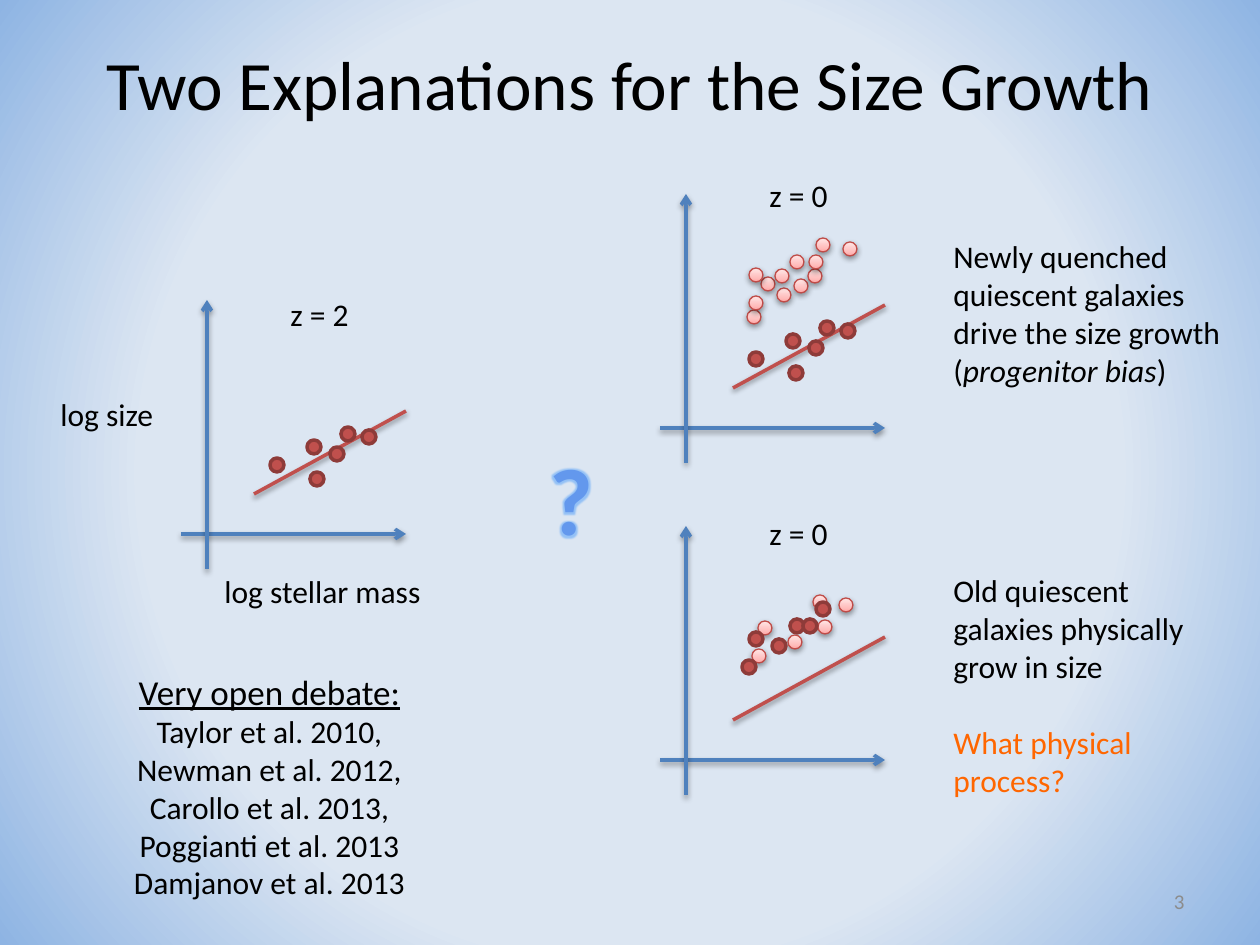
from lxml import etree
from pptx import Presentation
from pptx import util as u
from pptx.dml.color import RGBColor
from pptx.enum import shapes as s, text as t
from pptx.oxml import parse_xml
from pptx.oxml.ns import nsdecls, qn

PX = 914400 / 126
FONT = "Calibri"
BLACK, GREY, ORANGE = "000000", "8C8C8C", "FF6600"
BLUE, RED, DARK_RED, ROSE = "4F81BD", "C0504D", "8E3B39", "BF4C48"
DOT = 14

# Dot centres, relative to the point where the axes cross
COMPACT = [(70, -69), (110, -55), (107, -87), (141, -100), (162, -97), (130, -80)]
QUENCHED = [(68, -111), (98, -133), (82, -144), (115, -142), (164, -179), (129, -152),
            (70, -125), (96, -152), (70, -153), (111, -166), (137, -183), (130, -166)]
GROWN = [(63, -93), (93, -114), (70, -121), (111, -134), (137, -151), (124, -134)]
GROWN_NEW = [(73, -104), (109, -118), (160, -155), (139, -133), (79, -132), (134, -158)]


def px(*values):
    return [round(value * PX) for value in values]


def rgb(color):
    return RGBColor.from_string(color)


def gradient(stops, direction):
    """Return a gradFill element; direction is its a:lin or a:path markup."""
    marks = "".join(f'<a:gs pos="{position * 1000}"><a:srgbClr val="{color}"/></a:gs>'
                    for position, color in stops)
    return parse_xml(f'<a:gradFill {nsdecls("a")} rotWithShape="1">'
                     f"<a:gsLst>{marks}</a:gsLst>{direction}</a:gradFill>")


def set_background(slide):
    background = parse_xml(f'<p:bg {nsdecls("p", "a")}><p:bgPr><a:effectLst/></p:bgPr></p:bg>')
    circle = ('<a:path path="circle"><a:fillToRect l="50000" t="50000" '
              'r="50000" b="50000"/></a:path>')
    background[0].insert(0, gradient([(62, "DCE6F2"), (100, "8EB4E3")], circle))
    slide.element.cSld.insert(0, background)


def set_shadow(shape, visible):
    effects = etree.SubElement(shape.element.spPr, qn("a:effectLst"))
    if visible:
        effects.append(parse_xml(
            f'<a:outerShdw {nsdecls("a")} blurRad="40000" dist="20000" dir="5400000" '
            'rotWithShape="0"><a:srgbClr val="000000"><a:alpha val="38000"/>'
            "</a:srgbClr></a:outerShdw>"))


def add_text(parent, box, paragraphs, size=18, color=BLACK, align=t.PP_ALIGN.LEFT,
             anchor=t.MSO_ANCHOR.TOP, wrap=True):
    """Each paragraph is a list of (text, format) runs, or a plain string."""
    shape = parent.add_textbox(*px(*box))
    frame = shape.text_frame
    frame.word_wrap = wrap
    frame.vertical_anchor = anchor
    for index, runs in enumerate(paragraphs):
        paragraph = frame.add_paragraph() if index else frame.paragraphs[0]
        paragraph.alignment = align
        for words, look in [(runs, {})] if isinstance(runs, str) else runs:
            run = paragraph.add_run()
            run.text = words
            run.font.name = FONT
            run.font.size = u.Pt(look.get("size", size))
            run.font.color.rgb = rgb(look.get("color", color))
            run.font.bold = look.get("bold")
            run.font.italic = look.get("italic")
            run.font.underline = look.get("underline")
    return shape


def add_line(parent, start, end, color, arrow=False):
    line = parent.add_connector(s.MSO_CONNECTOR.STRAIGHT, *px(*start, *end))
    line.line.color.rgb = rgb(color)
    line.line.width = u.Pt(2)
    if arrow:
        outline = line.element.spPr.find(qn("a:ln"))
        etree.SubElement(outline, qn("a:tailEnd"), type="arrow")
    set_shadow(line, True)


def add_dot(parent, x, y, new):
    dot = parent.add_shape(s.MSO_SHAPE.OVAL, *px(x - DOT / 2, y - DOT / 2, DOT, DOT))
    dot.line.color.rgb = rgb(ROSE if new else DARK_RED)
    dot.line.width = u.Pt(0.75 if new else 2)
    if new:
        stops = [(0, "FFA6A5"), (35, "FFC0BF"), (100, "FFE7E7")]
        geometry = dot.element.spPr.find(qn("a:prstGeom"))
        geometry.addnext(gradient(stops, '<a:lin ang="16200000" scaled="0"/>'))
    else:
        dot.fill.solid()
        dot.fill.fore_color.rgb = rgb(RED)
    set_shadow(dot, new)


def add_plot(parent, x, y, redshift, label_top, old, new=()):
    """Draw axes crossing at x, y with the size-mass relation and its galaxies."""
    for dx, dy in new:
        add_dot(parent, x + dx, y + dy, True)
    add_line(parent, (x + 47, y - 40), (x + 199, y - 123), RED)
    add_line(parent, (x - 26, y), (x + 199, y), BLUE, arrow=True)
    add_line(parent, (x, y + 35), (x, y - 234), BLUE, arrow=True)
    for dx, dy in old:
        add_dot(parent, x + dx, y + dy, False)
    add_text(parent, (x + 71, label_top, 84, 50), [f"z = {redshift}"], wrap=False)


def add_question_mark(parent):
    shape = add_text(parent, (537, 435, 69, 127), [[("?", {"bold": True})]],
                     size=54, color="6398ED", wrap=False)
    properties = shape.text_frame.paragraphs[0].runs[0].font._element
    properties.set("spc", "300")
    fill = properties.find(qn("a:solidFill"))
    fill.addprevious(parse_xml(
        f'<a:ln {nsdecls("a")} w="11430"><a:solidFill><a:srgbClr val="F4F6F9"/>'
        "</a:solidFill></a:ln>"))
    fill.addnext(parse_xml(
        f'<a:effectLst {nsdecls("a")}><a:glow rad="45500"><a:srgbClr val="0D7DFF">'
        '<a:alpha val="35000"/></a:srgbClr></a:glow></a:effectLst>'))
    properties.replace(fill, gradient([(10, "6398ED"), (75, "265EA0")],
                                      '<a:lin ang="5400000" scaled="0"/>'))


def main():
    presentation = Presentation()
    presentation.slide_width, presentation.slide_height = px(1260, 945)
    slide = presentation.slides.add_slide(presentation.slide_layouts[6])
    set_background(slide)
    shapes = slide.shapes
    center, middle = t.PP_ALIGN.CENTER, t.MSO_ANCHOR.MIDDLE

    add_text(shapes, (63, 4, 1134, 158), ["Two Explanations for the Size Growth"],
             size=39.6, align=center, anchor=middle)
    add_text(shapes, (903, 876, 294, 50), ["3"], size=12, color=GREY,
             align=t.PP_ALIGN.RIGHT, anchor=middle)
    add_text(shapes, (98, 664, 343, 246), [
        [("Very open debate: ", {"size": 20, "underline": True}),
         ("Taylor et al. 2010, Newman et al. 2012, Carollo et al. 2013, "
          "Poggianti et al. 2013", {})],
        "Damjanov et al. 2013"], align=center)

    add_plot(shapes, 207, 534, 2, 289, COMPACT)
    add_text(shapes, (212, 566, 224, 50), ["log stellar mass"], wrap=False)
    add_text(shapes, (48, 389, 120, 50), ["log size"], wrap=False)

    bias = shapes.add_group_shape().shapes
    add_plot(bias, 686, 428, 0, 170, COMPACT, QUENCHED)
    add_text(bias, (941, 231, 305, 165), [
        "Newly quenched", "quiescent galaxies drive the size growth",
        [("(", {}), ("progenitor bias", {"italic": True}), (")", {})]])

    growth = shapes.add_group_shape().shapes
    add_plot(growth, 686, 760, 0, 508, GROWN, GROWN_NEW)
    note = add_text(growth, (941, 565, 305, 280), [
        "Old quiescent galaxies physically", "grow in size",
        [("What physical process?", {"color": ORANGE})]])
    note.text_frame.paragraphs[-1].space_before = u.Pt(22)

    add_question_mark(shapes)
    presentation.save("out.pptx")


if __name__ == "__main__":
    main()
